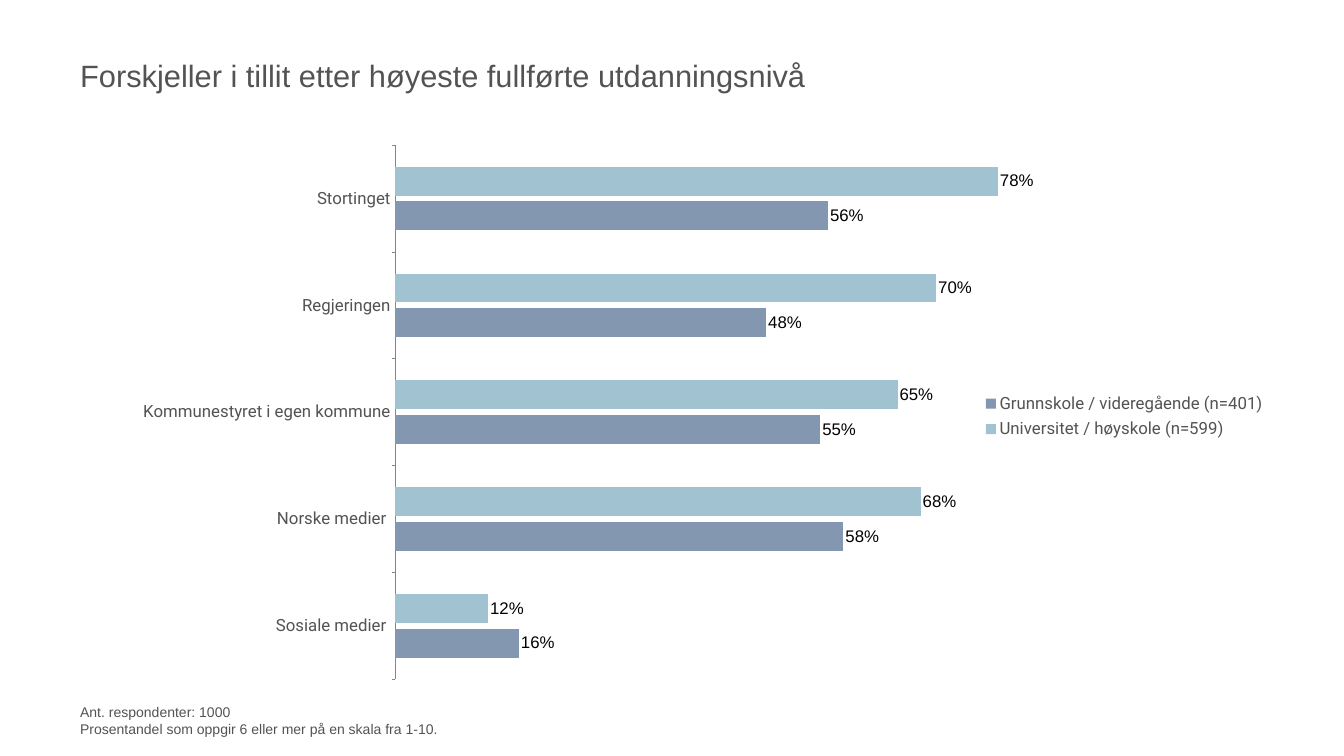
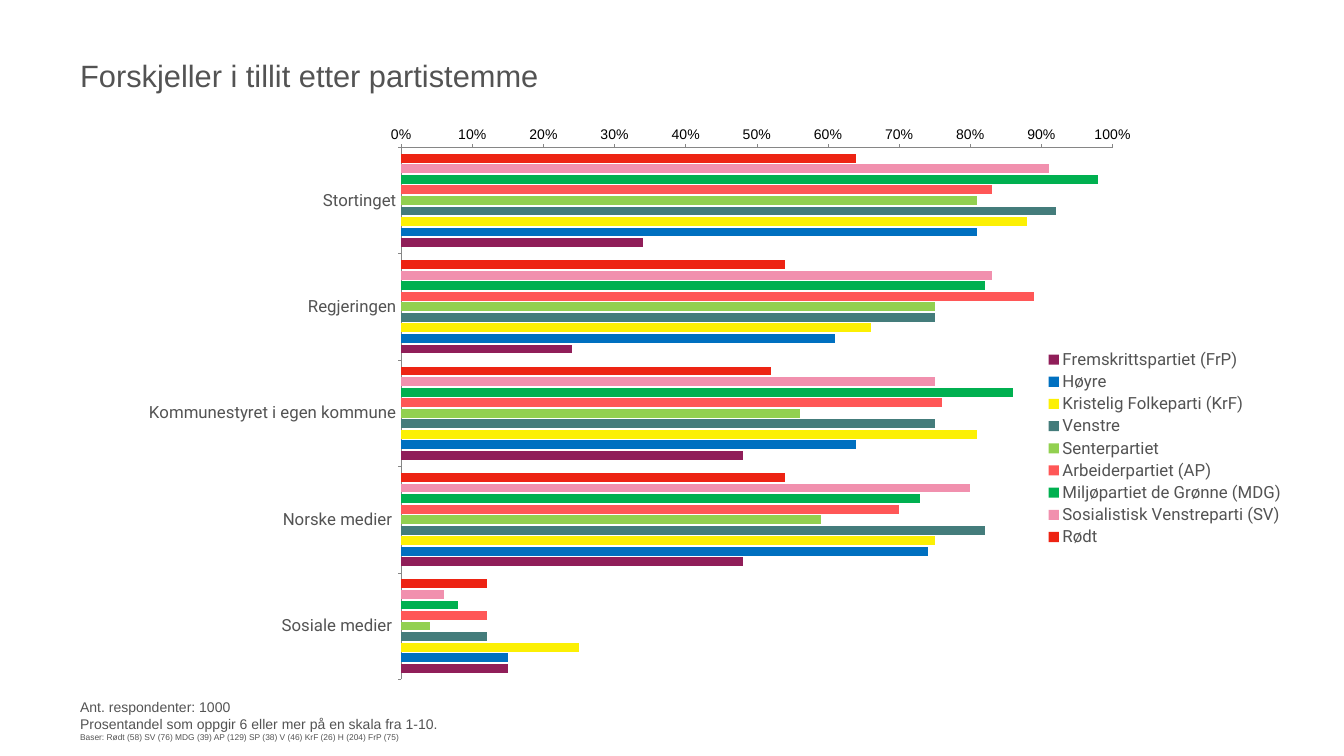
from dataclasses import dataclass

import pptx
import pptx.chart.data
import pptx.dml.color
import pptx.enum.chart
import pptx.enum.text
import pptx.oxml
import pptx.oxml.ns
import pptx.util
from pptx.util import Inches


@dataclass(frozen=True)
class Theme:
    text: str = "535353"
    black: str = "000000"
    axis: str = "868686"
    font: str = "Arial"
    chart_font: str = "Roboto"
    title_size: int = 44
    label_size: int = 24
    note_size: int = 20
    base_size: int = 12


THEME = Theme()

CATEGORIES = ["Stortinget", "Regjeringen", "Kommunestyret i egen kommune",
              "Norske medier ", "Sosiale medier "]
NOTE = "Ant. respondenter: 1000\vProsentandel som oppgir 6 eller mer på en skala fra 1-10."

# Plot and legend frames are left, top, width, height as shares of the chart.
SLIDES = [
    {
        "title": "Forskjeller i tillit etter høyeste fullførte utdanningsnivå",
        "series": [
            ("Universitet / høyskole (n=599)", "A1C2D0", (0.78, 0.70, 0.65, 0.68, 0.12)),
            ("Grunnskole / videregående (n=401)", "8497B0", (0.56, 0.48, 0.55, 0.58, 0.16)),
        ],
        "chart_width": 23.66,
        "plot_frame": (0.267, 0.033, 0.648, 0.949),
        "legend_frame": (0.76, 0.465, 0.24, 0.1),
        "bar_labels": True,
        "notes": [(NOTE, THEME.note_size)],
    },
    {
        "title": "Forskjeller i tillit etter partistemme",
        "series": [
            ("Rødt", "ED2313", (0.64, 0.54, 0.52, 0.54, 0.12)),
            ("Sosialistisk Venstreparti (SV)", "F190AE", (0.91, 0.83, 0.75, 0.80, 0.06)),
            ("Miljøpartiet de Grønne (MDG)", "00B050", (0.98, 0.82, 0.86, 0.73, 0.08)),
            ("Arbeiderpartiet (AP)", "FF5757", (0.83, 0.89, 0.76, 0.70, 0.12)),
            ("Senterpartiet", "92D050", (0.81, 0.75, 0.56, 0.59, 0.04)),
            ("Venstre", "447C7B", (0.92, 0.75, 0.75, 0.82, 0.12)),
            ("Kristelig Folkeparti (KrF)", "FCF004", (0.88, 0.66, 0.81, 0.75, 0.25)),
            ("Høyre", "0070C0", (0.81, 0.61, 0.64, 0.74, 0.15)),
            ("Fremskrittspartiet (FrP)", "901E59", (0.34, 0.24, 0.48, 0.48, 0.15)),
        ],
        "chart_width": 24.09,
        "plot_frame": (0.267, 0.033, 0.586, 0.949),
        "legend_frame": (0.796, 0.39, 0.2, 0.36),
        "bar_labels": False,
        "notes": [
            (NOTE, THEME.note_size),
            ("Baser: Rødt (58) SV (76) MDG (39) AP (129) SP (38) V (46) KrF (26) H (204) FrP (75)",
             THEME.base_size),
        ],
    },
]

LEFT, CONTENT_WIDTH = 1.53, 23.66
TITLE_TOP, TITLE_HEIGHT = 0.47, 2.04
CHART_TOP, CHART_HEIGHT = 2.51, 11.17
NOTE_TOP, NOTE_HEIGHT = 13.68, 0.9
INSET, NOTE_INSET = 0.06, 0.38


def rgb(color):
    return pptx.dml.color.RGBColor.from_string(color)


def format_font(font, size, color=THEME.text, name=THEME.font):
    font.size = pptx.util.Pt(size)
    font.name = name
    font.color.rgb = rgb(color)
    font.bold = False


def place(shape, left, top, width, height):
    shape.left, shape.top = Inches(left), Inches(top)
    shape.width, shape.height = Inches(width), Inches(height)


def write_text(shape, lines, top_inset=INSET):
    """Fill the shape with (text, size) paragraphs."""
    frame = shape.text_frame
    frame.word_wrap = True
    frame.auto_size = pptx.enum.text.MSO_AUTO_SIZE.NONE
    frame.vertical_anchor = pptx.enum.text.MSO_ANCHOR.MIDDLE
    frame.margin_left = frame.margin_right = frame.margin_bottom = Inches(INSET)
    frame.margin_top = Inches(top_inset)
    for index, (text, size) in enumerate(lines):
        paragraph = frame.add_paragraph() if index else frame.paragraphs[0]
        paragraph.text = text
        paragraph.alignment = pptx.enum.text.PP_ALIGN.LEFT
        for run in paragraph.runs:
            format_font(run.font, size)


def set_layout(parent, position, frame, inner=False):
    """Fix a chart part's frame, inserted as the given child of its parent."""
    qn = pptx.oxml.ns.qn
    for old in parent.findall(qn("c:layout")):
        parent.remove(old)
    target = '<c:layoutTarget val="inner"/>' if inner else ""
    modes = "".join(f'<c:{side}Mode val="edge"/>' for side in "xy")
    sizes = "".join(f'<c:{side} val="{share}"/>' for side, share in zip("xywh", frame))
    parent.insert(position, pptx.oxml.parse_xml(
        f'<c:layout {pptx.oxml.ns.nsdecls("c")}><c:manualLayout>'
        f'{target}{modes}{sizes}</c:manualLayout></c:layout>'))


def add_trust_chart(slide, content):
    chart_enum = pptx.enum.chart
    data = pptx.chart.data.CategoryChartData(number_format="0%")
    data.categories = CATEGORIES
    for name, _, values in content["series"]:
        data.add_series(name, values)
    chart = slide.shapes.add_chart(
        chart_enum.XL_CHART_TYPE.BAR_CLUSTERED, Inches(LEFT), Inches(CHART_TOP),
        Inches(content["chart_width"]), Inches(CHART_HEIGHT), data).chart
    chart.has_title = False
    format_font(chart.font, 10, THEME.black)

    plot = chart.plots[0]
    plot.gap_width, plot.overlap, plot.vary_by_categories = 150, -20, False
    for series, (_, color, _) in zip(plot.series, content["series"]):
        series.format.fill.solid()
        series.format.fill.fore_color.rgb = rgb(color)
        series.invert_if_negative = False
    if content["bar_labels"]:
        plot.has_data_labels = True
        labels = plot.data_labels
        labels.show_value = True
        labels.position = chart_enum.XL_LABEL_POSITION.OUTSIDE_END
        labels.number_format, labels.number_format_is_linked = "0%", False
        format_font(labels.font, THEME.label_size, THEME.black)

    category_axis, value_axis = chart.category_axis, chart.value_axis
    category_axis.reverse_order = True
    format_font(category_axis.tick_labels.font, THEME.label_size, name=THEME.chart_font)
    value_axis.minimum_scale, value_axis.maximum_scale, value_axis.major_unit = 0, 1, 0.1
    value_axis.visible = not content["bar_labels"]
    value_axis.tick_labels.number_format = "0%"
    value_axis.tick_labels.number_format_is_linked = False
    format_font(value_axis.tick_labels.font, THEME.note_size, THEME.black)
    for axis in (category_axis, value_axis):
        axis.has_major_gridlines = False
        axis.major_tick_mark = chart_enum.XL_TICK_MARK.OUTSIDE
        axis.format.line.color.rgb = rgb(THEME.axis)
        axis.format.line.width = pptx.util.Pt(0.75)

    chart.has_legend = True
    chart.legend.position = chart_enum.XL_LEGEND_POSITION.RIGHT
    chart.legend.include_in_layout = False
    format_font(chart.legend.font, THEME.label_size, name=THEME.chart_font)
    plot_area, legend = (next(chart.element.iter(pptx.oxml.ns.qn(tag)))
                         for tag in ("c:plotArea", "c:legend"))
    set_layout(plot_area, 0, content["plot_frame"], inner=True)
    set_layout(legend, 1, content["legend_frame"])


def add_slide(presentation, content):
    slide = presentation.slides.add_slide(presentation.slide_layouts[5])
    title = slide.shapes.title
    place(title, LEFT, TITLE_TOP, CONTENT_WIDTH, TITLE_HEIGHT)
    write_text(title, [(content["title"], THEME.title_size)])
    add_trust_chart(slide, content)
    note = slide.shapes.add_textbox(0, 0, 0, 0)
    place(note, LEFT, NOTE_TOP, CONTENT_WIDTH, NOTE_HEIGHT)
    write_text(note, content["notes"], top_inset=NOTE_INSET)


def main():
    presentation = pptx.Presentation()
    presentation.slide_width, presentation.slide_height = Inches(26.67), Inches(15)
    for content in SLIDES:
        add_slide(presentation, content)
    presentation.save("out.pptx")


if __name__ == "__main__":
    main()
